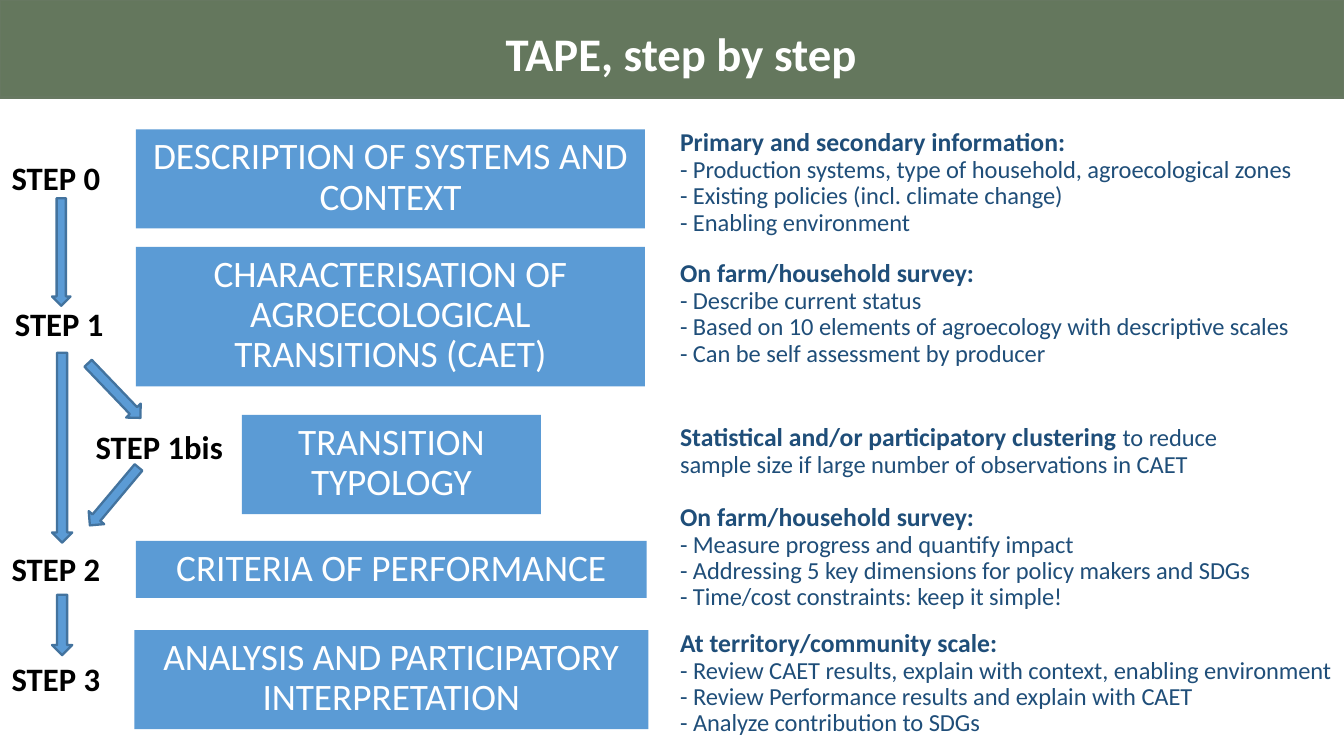
import pptx
import pptx.util
from pptx.dml.color import RGBColor
from pptx.enum.shapes import MSO_SHAPE
from pptx.enum.text import MSO_ANCHOR, MSO_AUTO_SIZE, PP_ALIGN
from pptx.util import Inches, Pt

FONT = "Calibri"
GREEN, GREEN_EDGE = RGBColor(0x64, 0x77, 0x5D), RGBColor(0x67, 0x78, 0x61)
BLUE, BLUE_EDGE = RGBColor(0x5B, 0x9B, 0xD5), RGBColor(0x43, 0x73, 0x9E)
NAVY = RGBColor(0x1F, 0x4E, 0x79)
WHITE, BLACK = RGBColor(0xFF, 0xFF, 0xFF), RGBColor(0, 0, 0)

TITLE = "TAPE, step by step"
SURVEY = "On farm/household survey:"

# label, (left, top, width); stage, (left, top, width, height);
# detail centre and width, detail heading, text on the heading's line, points
STEPS = [
    ("STEP 0", (-0.03, 0.89, 1.19),
     "DESCRIPTION OF SYSTEMS AND CONTEXT", (0.81, 0.77, 3.03, 0.59),
     (1.09, 3.94), "Primary and secondary information:", "",
     ["Production systems, type of household, agroecological zones",
      "Existing policies (incl. climate change)",
      "Enabling environment"]),
    ("STEP 1", (-0.01, 1.76, 1.19),
     "CHARACTERISATION OF AGROECOLOGICAL TRANSITIONS (CAET)", (0.81, 1.47, 3.03, 0.83),
     (1.87, 4.07), SURVEY, "",
     ["Describe current status",
      "Based on 10 elements of agroecology with descriptive scales",
      "Can be self assessment by producer"]),
    ("STEP 1bis", (0.47, 2.49, 1.59),
     "TRANSITION TYPOLOGY", (1.44, 2.47, 1.78, 0.59),
     (2.69, 3.8), "Statistical and/or participatory clustering ",
     "to reduce sample size if large number of observations in CAET", []),
    ("STEP 2", (-0.03, 3.22, 1.19),
     "CRITERIA OF PERFORMANCE", (0.81, 3.22, 3.04, 0.34),
     (3.32, 4.04), SURVEY, "",
     ["Measure progress and quantify impact",
      "Addressing 5 key dimensions for policy makers and SDGs",
      "Time/cost constraints: keep it simple!"]),
    ("STEP 3", (-0.03, 3.87, 1.19),
     "ANALYSIS AND PARTICIPATORY INTERPRETATION", (0.8, 3.75, 3.06, 0.59),
     (4.07, 4.22), "At territory/community scale:", "",
     ["Review CAET results, explain with context, enabling environment",
      "Review Performance results and explain with CAET",
      "Analyze contribution to SDGs"]),
]
LABEL_HEIGHT = 0.34
DETAIL_LEFT, DETAIL_HEIGHT = 3.95, 0.86

# left, top, width, height, rotation
ARROWS = [
    (0.31, 1.18, 0.11, 0.64, 0),
    (0.62, 2.1, 0.12, 0.45, 316.2),
    (0.62, 2.73, 0.12, 0.45, 40),
    (0.31, 3.54, 0.12, 0.36, 0),
    (0.31, 2.1, 0.12, 1.13, 0),
]


def add_run(paragraph, text, size, color, bold=False):
    run = paragraph.add_run()
    run.text = text
    run.font.name, run.font.size, run.font.bold = FONT, Pt(size), bold
    run.font.color.rgb = color


def add_solid(slide, preset, box, fill, edge=None):
    shape = slide.shapes.add_shape(preset, *map(Inches, box))
    shape.shadow.inherit = False
    shape.fill.solid()
    shape.fill.fore_color.rgb = fill
    if edge is None:
        shape.line.fill.background()
    else:
        shape.line.color.rgb = edge
        shape.line.width = Pt(1)
    return shape


def add_text_frame(slide, box):
    frame = slide.shapes.add_textbox(*map(Inches, box)).text_frame
    frame.word_wrap = True
    return frame


def add_title(slide):
    band = add_solid(slide, MSO_SHAPE.RECTANGLE, (0, 0, 8, 0.58), GREEN, GREEN_EDGE)
    title = slide.shapes.title
    title._element.addprevious(band._element)
    title.left, title.top, title.width, title.height = map(Inches, (2.91, 0.1, 4.84, 0.44))
    frame = title.text_frame
    frame.auto_size = MSO_AUTO_SIZE.NONE
    frame.vertical_anchor = MSO_ANCHOR.TOP
    frame.paragraphs[0].alignment = PP_ALIGN.LEFT
    add_run(frame.paragraphs[0], TITLE, 20, WHITE, bold=True)


def add_stage(slide, text, box):
    frame = add_solid(slide, MSO_SHAPE.RECTANGLE, box, BLUE).text_frame
    frame.word_wrap = True
    frame.vertical_anchor = MSO_ANCHOR.TOP
    paragraph = frame.paragraphs[0]
    paragraph.alignment = PP_ALIGN.CENTER
    paragraph.line_spacing = 0.9
    add_run(paragraph, text, 16, WHITE)


def add_detail(slide, center, width, heading, remark, points):
    frame = add_text_frame(
        slide, (DETAIL_LEFT, center - DETAIL_HEIGHT / 2, width, DETAIL_HEIGHT))
    frame.vertical_anchor = MSO_ANCHOR.MIDDLE
    frame.margin_top = frame.margin_bottom = Inches(0.1)
    paragraph = frame.paragraphs[0]
    paragraph.line_spacing = 0.9
    add_run(paragraph, heading, 11, NAVY, bold=True)
    if remark:
        add_run(paragraph, remark, 10.5, NAVY)
    for point in points:
        paragraph = frame.add_paragraph()
        paragraph.line_spacing = 0.9
        add_run(paragraph, "- " + point, 10.5, NAVY)


def main():
    deck = pptx.Presentation()
    deck.slide_width, deck.slide_height = Inches(8), Inches(4.5)
    slide = deck.slides.add_slide(deck.slide_layouts[5])
    add_title(slide)
    for label, label_box, stage, stage_box, (center, width), heading, remark, points in STEPS:
        add_detail(slide, center, width, heading, remark, points)
        add_stage(slide, stage, stage_box)
        label_frame = add_text_frame(slide, (*label_box, LABEL_HEIGHT))
        add_run(label_frame.paragraphs[0], label, 14, BLACK, bold=True)
    for *box, rotation in ARROWS:
        arrow = add_solid(slide, MSO_SHAPE.DOWN_ARROW, box, BLUE, BLUE_EDGE)
        arrow.rotation = rotation
    deck.save("out.pptx")


if __name__ == "__main__":
    main()
